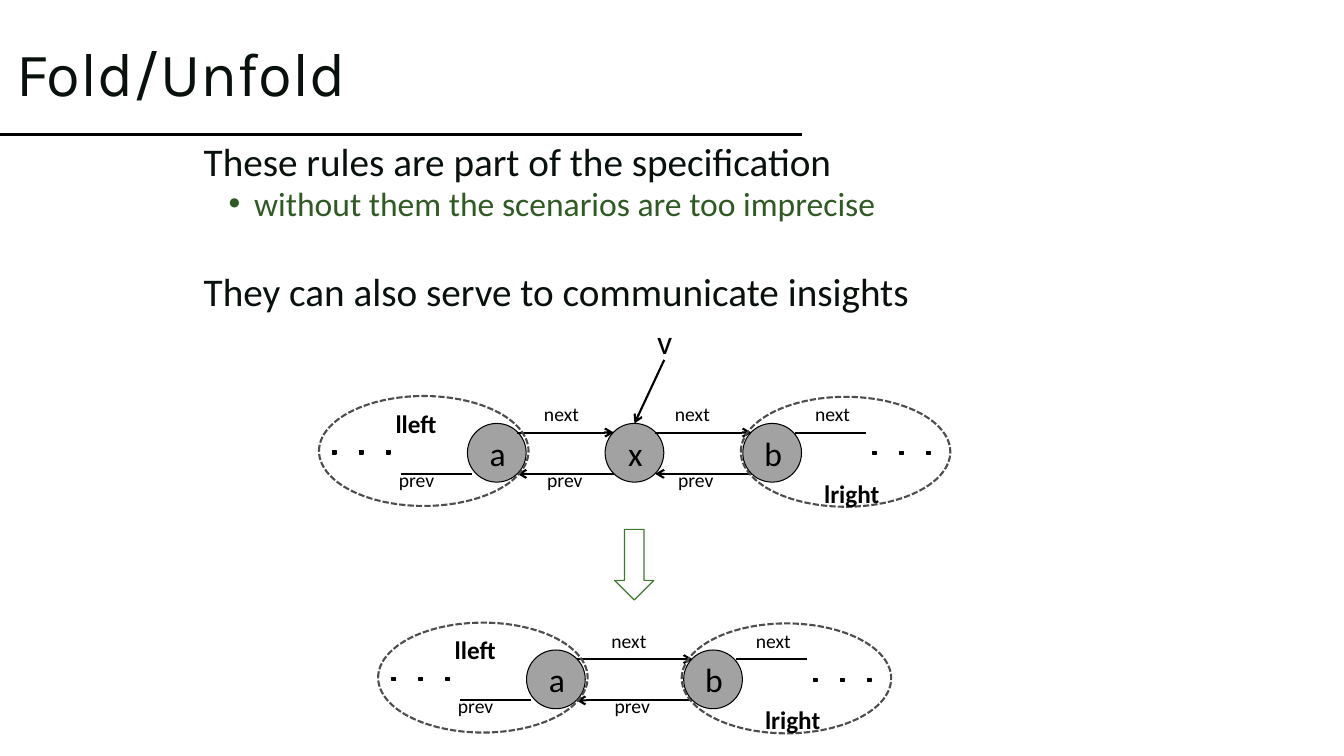
from pptx import Presentation
from pptx.dml.color import RGBColor
from pptx.enum import dml, shapes, text
from pptx.oxml.ns import qn
from pptx.util import Cm, Pt
from lxml import etree

COLORS = {"ink": "08110B", "green": "2F5A24", "black": "000000", "white": "FFFFFF",
          "node": "A2A2A2", "dash": "4D4D4D", "arrow": "3F7830"}
TITLE = "Fold/Unfold"
# wording, level, size, colour, space before
POINTS = [
    ("These rules are part of the specification", 0, 28, "ink", 10),
    ("without them the scenarios are too imprecise", 1, 24, "green", 5),
    ("They can also serve to communicate insights", 0, 28, "ink", 38),
]
# Linked lists: node lefts, shared top and lefts of the "next" labels, in cm
LISTS = [
    {"nodes": {"a": 11.78, "x": 15.25, "b": 18.72}, "top": 10.67, "labels": [13.46, 16.76]},
    {"nodes": {"a": 13.27, "b": 17.23}, "top": 16.38, "labels": [15.16]},
]
NODE = 1.48
NEXT_Y, PREV_Y = 0.23, 1.27
NEXT_LABEL_Y, PREV_LABEL_Y = -0.66, 0.99
DOT, DOT_STEP = 0.08, 0.68
REGION = (5.28, 2.77)

deck = Presentation()
deck.slide_width, deck.slide_height = Cm(33.87), Cm(19.05)
page = deck.slides.add_slide(deck.slide_layouts[1])


def color(name):
    return RGBColor.from_string(COLORS[name])


def style(span, size, name="black", font="Calibri", bold=False):
    span.font.size, span.font.name, span.font.bold = Pt(size), font, bold
    span.font.color.rgb = color(name)


def place(shape, left, top, width, height):
    shape.left, shape.top, shape.width, shape.height = map(Cm, (left, top, width, height))


def add_shape(kind, left, top, width, height, fill, line, weight):
    shape = page.shapes.add_shape(kind, *map(Cm, (left, top, width, height)))
    shape.shadow.inherit = False
    if fill:
        shape.fill.solid()
        shape.fill.fore_color.rgb = color(fill)
    else:
        shape.fill.background()
    shape.line.color.rgb = color(line)
    shape.line.width = Pt(weight)
    return shape


def add_line(x1, y1, x2, y2, weight=1.5, arrow=False):
    line = page.shapes.add_connector(shapes.MSO_CONNECTOR.STRAIGHT, *map(Cm, (x1, y1, x2, y2)))
    line.line.color.rgb = color("black")
    line.line.width = Pt(weight)
    if arrow:
        etree.SubElement(line.line._get_or_add_ln(), qn("a:tailEnd"), type="arrow")
    etree.SubElement(line._element.spPr, qn("a:effectLst"))
    return line


def add_label(wording, left, top, width, height, size=14, bold=False):
    box = page.shapes.add_textbox(*map(Cm, (left, top, width, height)))
    box.text_frame.text = wording
    box.text_frame.word_wrap = False
    box.text_frame.auto_size = text.MSO_AUTO_SIZE.SHAPE_TO_FIT_TEXT
    style(box.text_frame.paragraphs[0].runs[0], size, bold=bold)


def add_next(left, top):
    add_label("next", left, top + NEXT_LABEL_Y, 1.4, 0.86)


def add_prev(left, top):
    add_label("prev", left, top + PREV_LABEL_Y, 1.42, 0.86)


def add_node(name, left, top):
    node = add_shape(shapes.MSO_SHAPE.OVAL, left, top, NODE, NODE, "node", "black", 0.75)
    frame = node.text_frame
    frame.text = name
    frame.margin_left, frame.margin_right = Cm(0.05), 0
    frame.vertical_anchor = text.MSO_ANCHOR.MIDDLE
    frame.paragraphs[0].alignment = text.PP_ALIGN.CENTER
    style(frame.paragraphs[0].runs[0], 24)
    return node


def add_dots(left, top):
    for step in range(3):
        add_shape(shapes.MSO_SHAPE.RECTANGLE, left + step * DOT_STEP, top, DOT, DOT,
                  "black", "black", 0.85)


def add_region(left, top):
    region = add_shape(shapes.MSO_SHAPE.OVAL, left, top, *REGION, None, "dash", 1.5)
    region.line.dash_style = dml.MSO_LINE.SQUARE_DOT


def add_list(nodes, top, labels):
    drawn = {name: add_node(name, left, top) for name, left in nodes.items()}
    lefts = list(nodes.values())
    first, last = lefts[0], lefts[-1]
    # Links between neighbours
    for left, right, label in zip(lefts, lefts[1:], labels):
        start, end = left + 1.26, right + 0.22
        add_line(start, top + NEXT_Y, end, top + NEXT_Y, arrow=True)
        add_line(end, top + PREV_Y, start, top + PREV_Y, arrow=True)
        add_next(label, top)
        add_prev(label + 0.08, top)
    # Open ends
    add_line(last + 1.32, top + NEXT_Y, last + 3.1, top + NEXT_Y)
    add_next(last + 1.57, top)
    add_dots(last + 3.28, top + 0.71)
    add_line(first + 0.11, top + PREV_Y, first - 1.68, top + PREV_Y)
    add_prev(first - 1.98, top)
    add_dots(first - 3.39, top + 0.69)
    # Dashed regions and their names
    add_region(first - 3.74, top - 0.69)
    add_region(last - 0.05, top - 0.67)
    add_label("lleft", first - 2.06, top - 0.51, 1.57, 1.02, 18, True)
    add_label("lright", last + 1.8, top + 1.25, 1.93, 1.02, 18, True)
    return drawn


# Title and rule
add_line(0, 3.38, 20.22, 3.38, 2.25)
title = page.shapes.title
place(title, 0.15, 0.08, 19.08, 3.68)
title.text_frame.text = TITLE
title.text_frame.auto_size = text.MSO_AUTO_SIZE.NONE
title.text_frame.vertical_anchor = text.MSO_ANCHOR.MIDDLE
heading = title.text_frame.paragraphs[0]
heading.alignment, heading.line_spacing = text.PP_ALIGN.LEFT, 0.9
style(heading.runs[0], 44, "ink", "Karla")

# Body list
body = page.placeholders[1]
place(body, 4.24, 3.56, 24.97, 4.93)
body.text_frame.text = "\n".join(point[0] for point in POINTS)
body.text_frame.auto_size = text.MSO_AUTO_SIZE.NONE
for para, (wording, level, size, name, before) in zip(body.text_frame.paragraphs, POINTS):
    para.level, para.line_spacing, para.space_before = level, 0.8, Pt(before)
    para.space_after = Pt(0)
    style(para.runs[0], size, name)
    props = para._p.get_or_add_pPr()
    props.set("marL", str(Cm(0.64 + 1.27 * level)))
    props.set("indent", str(Cm(-0.64)))
    if level == 0:
        tint = etree.SubElement(props, qn("a:buClr"))
        etree.SubElement(tint, qn("a:srgbClr"), val=COLORS["white"])
        etree.SubElement(props, qn("a:buSzPct"), val="25000")
    etree.SubElement(props, qn("a:buFont"), typeface="Arial")
    etree.SubElement(props, qn("a:buChar"), char="•")

# Lists before and after folding
before_fold, after_fold = [add_list(**chain) for chain in LISTS]

# Pointer v and the step between the lists
pointer = add_line(16.74, 9.07, 15.99, 10.67, arrow=True)
pointer.end_connect(before_fold["x"], 0)
add_label("v", 16.31, 7.95, 0.89, 1.27, 24)
add_shape(shapes.MSO_SHAPE.DOWN_ARROW, 15.49, 13.34, 0.99, 1.78, "white", "arrow", 0.85)

deck.save("out.pptx")
